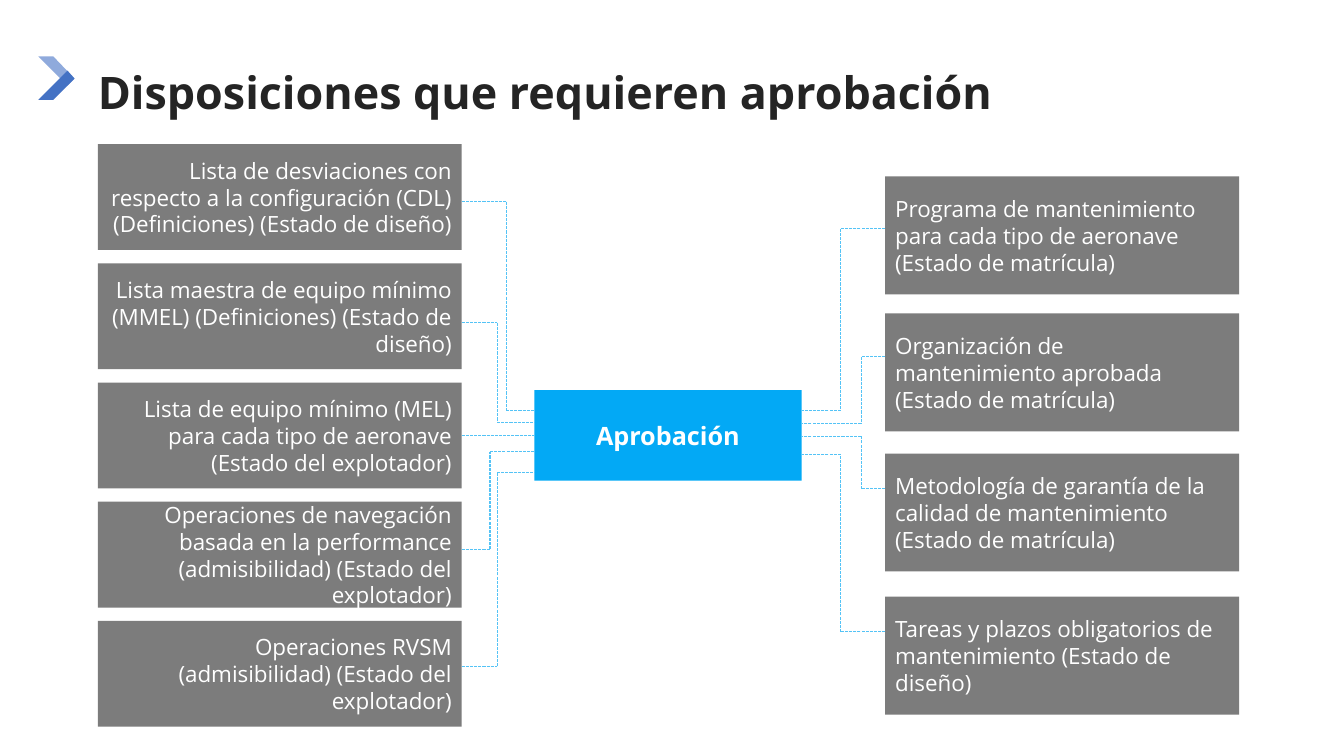
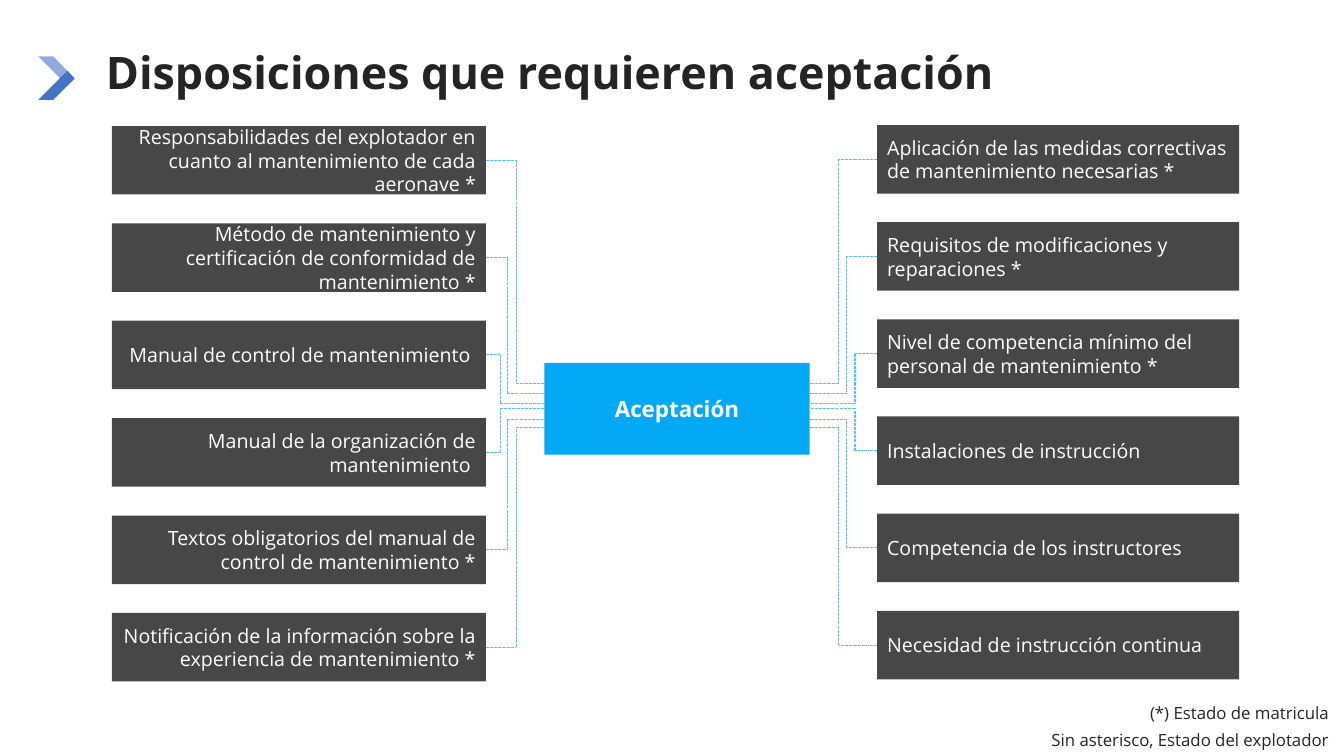
"""Build two hub-and-branch slides on provisions needing approval and acceptance."""
from dataclasses import dataclass

from lxml.etree import SubElement
from pptx import Presentation
from pptx.dml.color import RGBColor
from pptx.enum.dml import MSO_LINE
from pptx.enum.shapes import MSO_CONNECTOR, MSO_SHAPE
from pptx.enum.text import MSO_ANCHOR, MSO_AUTO_SIZE, PP_ALIGN
from pptx.oxml.ns import qn
from pptx.util import Inches, Pt


@dataclass(frozen=True)
class Theme:
    font: str = "Open Sans"
    ink: str = "242424"
    white: str = "FFFFFF"
    hub: str = "03A9F5"
    line: str = "54C3F6"
    gray: str = "7C7C7C"
    dark: str = "474747"
    chevron_light: str = "8FAADC"
    chevron_dark: str = "4472C4"
    title_size: int = 32
    large_size: int = 18
    body_size: int = 16
    small_size: int = 14
    note_size: int = 12
    line_width: float = 0.75


def spread(first, last, count):
    return [first + i * (last - first) / (count - 1) for i in range(count)]


class Deck:
    def __init__(self, theme):
        self.t = theme
        self.prs = Presentation()
        self.prs.slide_width, self.prs.slide_height = Inches(13.33), Inches(7.5)
        self.layout = self.prs.slide_layouts[5]
        self.s = None

    def slide(self, title, *box):
        self.s = self.prs.slides.add_slide(self.layout)
        sp = self.s.shapes.title
        sp.left, sp.top, sp.width, sp.height = map(Inches, box)
        sp.text_frame.auto_size = MSO_AUTO_SIZE.NONE
        self.fill_text(sp, [title], self.t.title_size, self.t.ink, bold=True)

    def fill_text(self, sp, lines, size, color, align=PP_ALIGN.LEFT, bold=False,
                  anchor=MSO_ANCHOR.MIDDLE):
        tf = sp.text_frame
        tf.word_wrap, tf.vertical_anchor = True, anchor
        for i, line in enumerate(lines):
            p = tf.add_paragraph() if i else tf.paragraphs[0]
            p.alignment = align
            r = p.add_run()
            r.text = line
            r.font.name, r.font.size, r.font.bold = self.t.font, Pt(size), bold
            r.font.color.rgb = RGBColor.from_string(color)
        return tf

    def paint(self, sp, color):
        sp.shadow.inherit = False
        sp.fill.solid()
        sp.fill.fore_color.rgb = RGBColor.from_string(color)
        sp.line.fill.background()

    def box(self, text, at, fill, size, align, bold=False):
        sp = self.s.shapes.add_shape(MSO_SHAPE.RECTANGLE, *map(Inches, at))
        self.paint(sp, fill)
        self.fill_text(sp, [text], size, self.t.white, align, bold)
        return sp

    def hub(self, text, at, size):
        return self.box(text, at, self.t.hub, size, PP_ALIGN.CENTER, bold=True)

    def line(self, start, end):
        c = self.s.shapes.add_connector(MSO_CONNECTOR.STRAIGHT, *start, *end)
        c.line.color.rgb = RGBColor.from_string(self.t.line)
        c.line.width = Pt(self.t.line_width)
        c.line.dash_style = MSO_LINE.SQUARE_DOT
        SubElement(c.element.spPr, qn("a:effectLst"))
        return c

    def branch(self, box, hub, lane, port, y):
        on_left = box.left < hub.left
        box_x = box.left + box.width if on_left else box.left
        hub_x = hub.left if on_left else hub.left + hub.width
        box_site, hub_site = (3, 1) if on_left else (1, 3)
        start_y = Inches(y) if y else box.top + box.height // 2
        if lane:
            lane, port = Inches(lane), Inches(port)
            points = [(box_x, start_y), (lane, start_y), (lane, port), (hub_x, port)]
        else:
            points = [(box_x, start_y), (hub_x, hub.top + hub.height // 2)]
        lines = [self.line(a, b) for a, b in zip(points, points[1:])]
        if not y:
            lines[0].begin_connect(box, box_site)
        if not lane:
            lines[-1].end_connect(hub, hub_site)

    def column(self, hub, left, width, height, tops, rows, fill, size):
        align = PP_ALIGN.RIGHT if Inches(left) < hub.left else PP_ALIGN.LEFT
        for top, (text, lane, port, y) in zip(tops, rows):
            sp = self.box(text, (left, top, width, height), fill, size, align)
            self.branch(sp, hub, lane, port, y)

    def note(self, lines, *at):
        sp = self.s.shapes.add_textbox(*map(Inches, at))
        tf = self.fill_text(sp, lines, self.t.note_size, self.t.ink, PP_ALIGN.RIGHT,
                            anchor=MSO_ANCHOR.BOTTOM)
        for i, p in enumerate(tf.paragraphs):
            p.line_spacing = 1.2
            p.space_before = Pt(0.2 * self.t.note_size if i else 0)

    def chevron(self):
        arms = [(0.56, 0.85, self.t.chevron_light), (0.99, 0.7, self.t.chevron_dark)]
        for i, (edge, inner, color) in enumerate(arms):
            points = [(0.38, edge), (0.67, inner), (0.74, 0.78), (0.53, edge)]
            points = [(Inches(x), Inches(y)) for x, y in points]
            fb = self.s.shapes.build_freeform(*points[0])
            fb.add_line_segments(points[1:], close=True)
            sp = fb.convert_to_shape()
            self.paint(sp, color)
            sp.element.nvSpPr.cNvPr.id = 20 + i
            self.layout.shapes.element.append(sp.element)


def approval(d):
    t = d.t
    d.slide("Disposiciones que requieren aprobación", 0.87, 0.18, 11.83, 1.46)
    hub = d.hub("Aprobación", (5.3, 3.87, 2.65, 0.9), t.large_size)
    left = [
        ("Lista de desviaciones con respecto a la configuración (CDL) (Definiciones) "
         "(Estado de diseño)", 5.02, 4.07, 2),
        ("Lista maestra de equipo mínimo (MMEL) (Definiciones) (Estado de diseño)",
         4.93, 4.19, 3.2),
        ("Lista de equipo mínimo (MEL) para cada tipo de aeronave (Estado del explotador)",
         None, None, None),
        ("Operaciones de navegación basada en la performance (admisibilidad) "
         "(Estado del explotador)", 4.86, 4.48, 5.45),
        ("Operaciones RVSM (admisibilidad) (Estado del explotador)", 4.93, 4.69, 6.61),
    ]
    right = [
        ("Programa de mantenimiento para cada tipo de aeronave (Estado de matrícula)",
         8.34, 4.07, 2.27),
        ("Organización de mantenimiento aprobada (Estado de matrícula)", 8.54, 4.2, 3.54),
        ("Metodología de garantía de la calidad de mantenimiento (Estado de matrícula)",
         8.54, 4.33, 4.85),
        ("Tareas y plazos obligatorios de mantenimiento (Estado de diseño)",
         8.34, 4.51, 6.27),
    ]
    d.column(hub, 0.97, 3.61, 1.05, spread(1.43, 6.16, 5), left, t.gray, t.body_size)
    d.column(hub, 8.78, 3.51, 1.17, [1.75, 3.11, 4.5, 5.92], right, t.gray, t.body_size)


def acceptance(d):
    t = d.t
    d.slide("Disposiciones que requieren aceptación", 0.95, 0.08, 11.67, 1.27)
    hub = d.hub("Aceptación", (5.4, 3.6, 2.63, 0.91), t.body_size)
    left = [
        "Responsabilidades del explotador en cuanto al mantenimiento de cada aeronave *",
        "Método de mantenimiento y certificación de conformidad de mantenimiento *",
        "Manual de control de mantenimiento ",
        "Manual de la organización de mantenimiento ",
        "Textos obligatorios del manual de control de mantenimiento *",
        "Notificación de la información sobre la experiencia de mantenimiento *",
    ]
    right = [
        "Aplicación de las medidas correctivas de mantenimiento necesarias *",
        "Requisitos de modificaciones y reparaciones *",
        "Nivel de competencia mínimo del personal de mantenimiento *",
        "Instalaciones de instrucción",
        "Competencia de los instructores",
        "Necesidad de instrucción continua",
    ]
    ports = [3.8, 3.9, 4, 4.05, 4.16, 4.24]
    sides = [(1.11, 3.71, 1.25, 6.08, left, [5.12, 5.03, 4.96]),
             (8.7, 3.59, 1.24, 6.06, right, [8.32, 8.4, 8.48])]
    for x, width, first, last, texts, lanes in sides:
        rows = [(text, lane, port, None)
                for text, lane, port in zip(texts, lanes + lanes[::-1], ports)]
        tops = spread(first, last, len(rows))
        d.column(hub, x, width, 0.68, tops, rows, t.dark, t.small_size)
    d.note(["(*) Estado de matricula", "Sin asterisco, Estado del explotador"],
           8.6, 6.85, 4.68, 0.64)


def main():
    d = Deck(Theme())
    approval(d)
    d.chevron()
    acceptance(d)
    d.prs.save("out.pptx")


if __name__ == "__main__":
    main()
